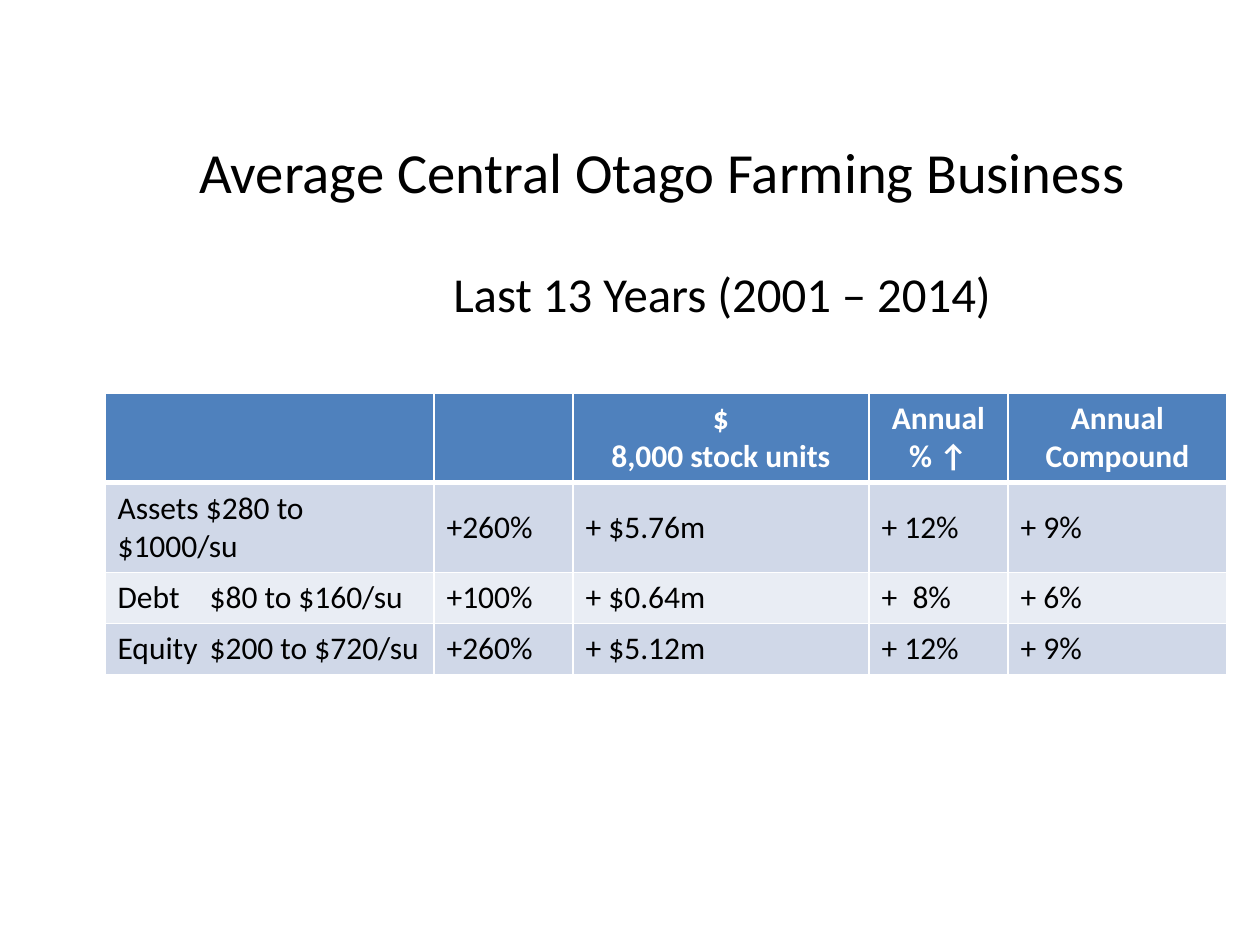
"""Build a slide with the farm business title and its growth table."""
from lxml import etree
from pptx import Presentation
from pptx import util as u
from pptx.dml.color import RGBColor
from pptx.enum import text
from pptx.oxml import ns

PX = 914400 / 126
FONT = "Calibri"
WHITE, BLACK, BLUE = "FFFFFF", "000000", "4F81BD"
BANDS = ("D0D8E8", "E9EDF4")

TITLE = "Average Central Otago Farming Business"
PERIOD = "Last 13 Years (2001 – 2014)"
ROWS = [
    ("", "", "$\n8,000 stock units", "Annual % ↑", "Annual Compound"),
    ("Assets $280 to $1000/su", "+260%", "+ $5.76m", "+ 12%", "+ 9%"),
    ("Debt\t$80 to $160/su", "+100%", "+ $0.64m", "+\t8%", "+ 6%"),
    ("Equity\t$200 to $720/su", "+260%", "+ $5.12m", "+ 12%", "+ 9%"),
]
COLUMN_WIDTHS = (329, 139, 296, 139, 219)
ROW_HEIGHTS = (89, 90, 51, 51)
TAB_STOPS = {0: 92, 3: 31}


def px(length):
    return u.Emu(round(length * PX))


def color(value):
    return RGBColor.from_string(value)


def write(para, words, size=18, ink=BLACK, bold=False, align=text.PP_ALIGN.LEFT):
    para.alignment = align
    span = para.add_run()
    span.text = words
    span.font.name, span.font.size, span.font.bold = FONT, u.Pt(size), bold
    span.font.color.rgb = color(ink)


def add_tab_stop(para, position):
    stops = etree.SubElement(para._p.get_or_add_pPr(), ns.qn("a:tabLst"))
    etree.SubElement(stops, ns.qn("a:tab"), pos=str(px(position)), algn="l")


def add_borders(cell, **widths):
    properties = cell._tc.get_or_add_tcPr()
    for side in "LRTB":
        width = u.Pt(widths.get(side, 1))
        line = etree.SubElement(properties, ns.qn("a:ln" + side), w=str(width))
        fill = etree.SubElement(line, ns.qn("a:solidFill"))
        etree.SubElement(fill, ns.qn("a:srgbClr"), val=WHITE)


def add_title(page):
    box = page.shapes.title
    box.left, box.top, box.width, box.height = map(px, (95, 145, 1134, 169))
    frame = box.text_frame
    frame.auto_size = text.MSO_AUTO_SIZE.NONE
    frame.vertical_anchor = text.MSO_ANCHOR.MIDDLE
    write(frame.paragraphs[0], TITLE, size=32.4, align=text.PP_ALIGN.CENTER)
    para = frame.add_paragraph()
    para.space_before = u.Pt(34)
    para._p.get_or_add_pPr().set("marL", str(px(120)))
    write(para, PERIOD, size=27.9, align=text.PP_ALIGN.CENTER)


def add_growth_table(page):
    size = (sum(COLUMN_WIDTHS), sum(ROW_HEIGHTS))
    table = page.shapes.add_table(
        len(ROWS), len(COLUMN_WIDTHS), *map(px, (105, 393, *size))).table
    for column, width in zip(table.columns, COLUMN_WIDTHS):
        column.width = px(width)
    for r, (row, height) in enumerate(zip(ROWS, ROW_HEIGHTS)):
        table.rows[r].height = px(height)
        header = r == 0
        style = dict(ink=WHITE, bold=True, align=text.PP_ALIGN.CENTER) if header else {}
        for c, words in enumerate(row):
            cell = table.cell(r, c)
            add_borders(cell, B=3 if header else 1, T=3 if r == 1 else 1)
            cell.fill.solid()
            cell.fill.fore_color.rgb = color(BLUE if header else BANDS[(r - 1) % 2])
            cell.vertical_anchor = text.MSO_ANCHOR.MIDDLE
            if not words:
                continue
            for i, line in enumerate(words.split("\n")):
                frame = cell.text_frame
                para = frame.add_paragraph() if i else frame.paragraphs[0]
                write(para, line, **style)
                if "\t" in line:
                    add_tab_stop(para, TAB_STOPS[c])


def main():
    deck = Presentation()
    deck.slide_width, deck.slide_height = px(1260), px(945)
    page = deck.slides.add_slide(deck.slide_layouts[5])
    add_title(page)
    add_growth_table(page)
    deck.save("out.pptx")


if __name__ == "__main__":
    main()
